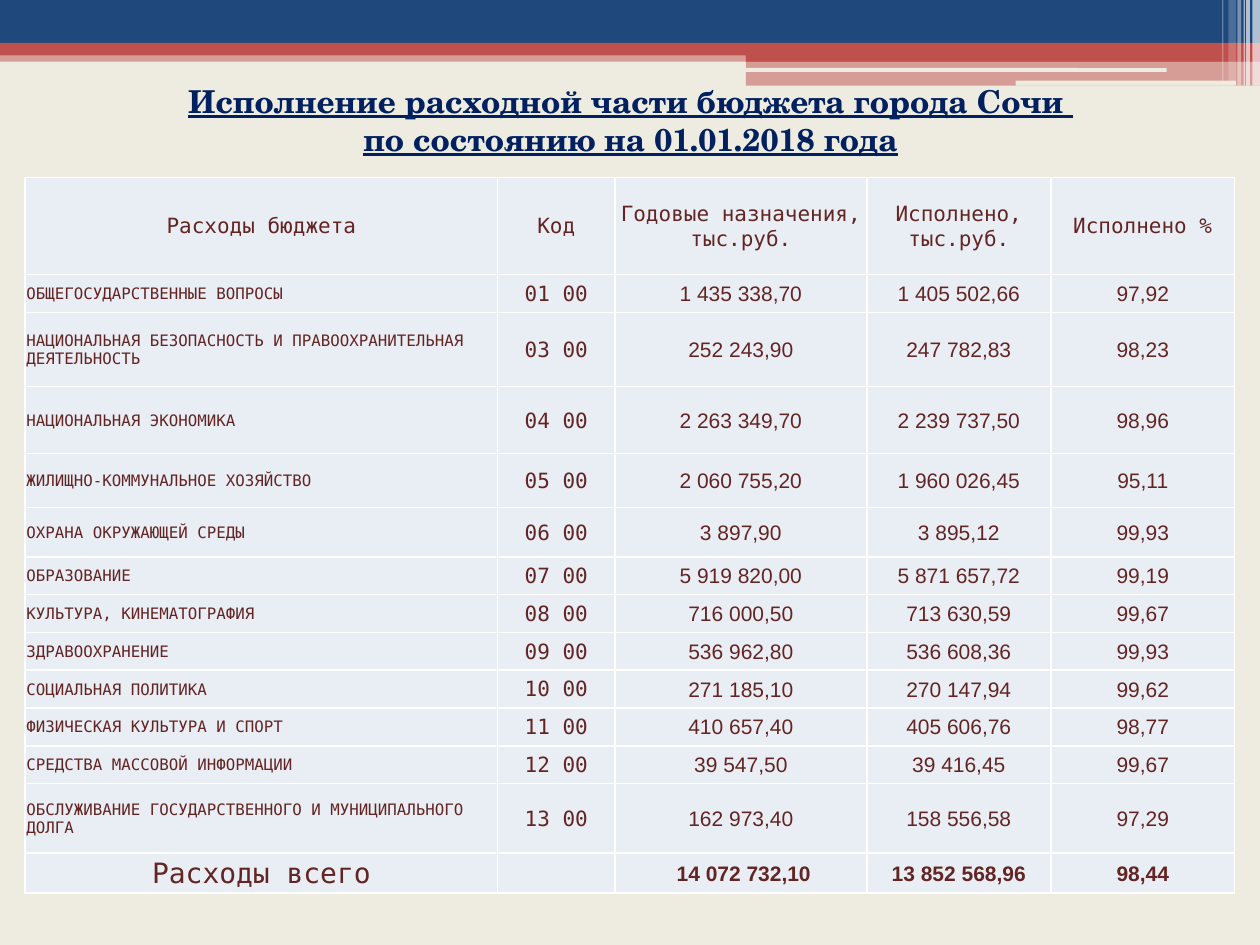
import lxml.etree
import pptx
import pptx.dml.color
import pptx.enum.shapes
import pptx.enum.text
import pptx.oxml.ns
import pptx.util

Inches = pptx.util.Inches
Pt = pptx.util.Pt
qn = pptx.oxml.ns.qn
SHAPE = pptx.enum.shapes.MSO_SHAPE
ALIGN = pptx.enum.text.PP_ALIGN
ANCHOR = pptx.enum.text.MSO_ANCHOR
FIT = pptx.enum.text.MSO_AUTO_SIZE

NAVY, RED, CREAM, WHITE = "1F497D", "C0504D", "EEECE1", "FFFFFF"
BROWN, PALE, INK = "632523", "E9EDF4", "002060"
MONO, SANS, SERIF = "DejaVu Sans Mono", "Arial", "TeX Gyre Schola"

# left, top, width, height, colour, opacity in percent
BANDS = [
    (0, 0.4, 10, 0.09, RED, 50),
    (0, 0, 10, 0.34, NAVY, 100),
    (0, 0.34, 10, 0.1, RED, 100),
    (5.92, 0.39, 4.08, 0.1, RED, 100),
    (5.92, 0.48, 4.08, 0.2, RED, 50),
]
SLOTS = [(5.91, 0.54, 3.35, 0.03), (8.06, 0.64, 1.75, 0.04)]
# left, width, height, opacity
STRIPES = [
    (9.94, 0.06, 0.68, 65),
    (9.89, 0.03, 0.68, 65),
    (9.87, 0.01, 0.68, 60),
    (9.82, 0.03, 0.68, 40),
    (9.75, 0.06, 0.64, 20),
    (9.7, 0.01, 0.64, 30),
]

TITLE = ["Исполнение расходной части бюджета города Сочи ",
         "по состоянию на 01.01.2018 года"]
HEAD = ["Расходы бюджета", "Код", "Годовые назначения, тыс.руб.",
        "Исполнено, тыс.руб.", "Исполнено %"]
ROWS = [
    ["ОБЩЕГОСУДАРСТВЕННЫЕ ВОПРОСЫ", "01 00", "1 435 338,70", "1 405 502,66", "97,92"],
    ["НАЦИОНАЛЬНАЯ БЕЗОПАСНОСТЬ И ПРАВООХРАНИТЕЛЬНАЯ ДЕЯТЕЛЬНОСТЬ",
     "03 00", "252 243,90", "247 782,83", "98,23"],
    ["НАЦИОНАЛЬНАЯ ЭКОНОМИКА", "04 00", "2 263 349,70", "2 239 737,50", "98,96"],
    ["ЖИЛИЩНО-КОММУНАЛЬНОЕ ХОЗЯЙСТВО", "05 00", "2 060 755,20", "1 960 026,45", "95,11"],
    ["ОХРАНА ОКРУЖАЮЩЕЙ СРЕДЫ", "06 00", "3 897,90", "3 895,12", "99,93"],
    ["ОБРАЗОВАНИЕ", "07 00", "5 919 820,00", "5 871 657,72", "99,19"],
    ["КУЛЬТУРА, КИНЕМАТОГРАФИЯ", "08 00", "716 000,50", "713 630,59", "99,67"],
    ["ЗДРАВООХРАНЕНИЕ", "09 00", "536 962,80", "536 608,36", "99,93"],
    ["СОЦИАЛЬНАЯ ПОЛИТИКА", "10 00", "271 185,10", "270 147,94", "99,62"],
    ["ФИЗИЧЕСКАЯ КУЛЬТУРА И СПОРТ", "11 00", "410 657,40", "405 606,76", "98,77"],
    ["СРЕДСТВА МАССОВОЙ ИНФОРМАЦИИ", "12 00", "39 547,50", "39 416,45", "99,67"],
    ["ОБСЛУЖИВАНИЕ ГОСУДАРСТВЕННОГО И МУНИЦИПАЛЬНОГО ДОЛГА",
     "13 00", "162 973,40", "158 556,58", "97,29"],
]
TOTAL = ["Расходы всего", "", " 14 072 732,10", "13 852 568,96", "98,44"]
WIDTHS = [3.75, 0.93, 2, 1.46, 1.46]
HEIGHTS = [0.77, 0.3, 0.59, 0.53, 0.43, 0.39] + [0.3] * 6 + [0.55, 0.32]

LABEL = {"name": MONO, "size": Pt(12)}
ITEM = {"name": MONO, "size": Pt(9)}
VALUE = {"name": SANS, "size": Pt(12)}
SUM = {"name": MONO, "size": Pt(16)}
BOLD = {**VALUE, "bold": True}
INSETS = {"margin_left": Inches(0.01), "margin_right": Inches(0.01),
          "margin_top": Inches(0.01), "margin_bottom": 0,
          "vertical_anchor": ANCHOR.MIDDLE}


def paint(target, color):
    target.rgb = pptx.dml.color.RGBColor.from_string(color)


def apply(target, values):
    for name, value in values.items():
        setattr(target, name, value)


def write(para, text, style, color, align=ALIGN.CENTER):
    para.alignment = align
    run = para.add_run()
    run.text = text
    apply(run.font, style)
    paint(run.font.color, color)


def add_band(slide, left, top, width, height, color, alpha=100, kind=SHAPE.RECTANGLE):
    band = slide.shapes.add_shape(
        kind, Inches(left), Inches(top), Inches(width), Inches(height))
    band.shadow.inherit = False
    band.line.fill.background()
    band.fill.solid()
    paint(band.fill.fore_color, color)
    if alpha < 100:
        tint = band.element.spPr.find(qn("a:solidFill"))[0]
        lxml.etree.SubElement(tint, qn("a:alpha"), val=str(alpha * 1000))


def add_title(slide):
    title = slide.shapes.title
    apply(title, {"left": Inches(0.2), "top": Inches(0.6),
                  "width": Inches(9.61), "height": Inches(0.71)})
    title.element.getparent().append(title.element)  # bring to the front
    frame = title.text_frame
    apply(frame, {"word_wrap": True, "auto_size": FIT.SHAPE_TO_FIT_TEXT,
                  "vertical_anchor": ANCHOR.TOP})
    style = {"name": SERIF, "size": Pt(18), "bold": True, "underline": True}
    for i, line in enumerate(TITLE):
        para = frame.add_paragraph() if i else frame.paragraphs[0]
        write(para, line, style, INK)


def add_edges(cell):
    props = cell._tc.get_or_add_tcPr()
    for side in ("a:lnL", "a:lnR", "a:lnT", "a:lnB"):
        edge = lxml.etree.SubElement(props, qn(side), w=str(Pt(1)))
        fill = lxml.etree.SubElement(edge, qn("a:solidFill"))
        lxml.etree.SubElement(fill, qn("a:srgbClr"), val=WHITE)


def fill_row(table, r, texts, styles, first=ALIGN.CENTER):
    for c, (text, style) in enumerate(zip(texts, styles)):
        cell = table.cell(r, c)
        apply(cell, INSETS)
        add_edges(cell)
        cell.fill.solid()
        paint(cell.fill.fore_color, PALE)
        align = ALIGN.CENTER if c else first
        write(cell.text_frame.paragraphs[0], text, style, BROWN, align)


def add_budget(slide):
    table = slide.shapes.add_table(
        len(HEIGHTS), len(WIDTHS), Inches(0.2), Inches(1.41),
        Inches(sum(WIDTHS)), Inches(sum(HEIGHTS))).table
    apply(table, {"first_row": False, "horz_banding": False})
    for col, width in zip(table.columns, WIDTHS):
        col.width = Inches(width)
    for row, height in zip(table.rows, HEIGHTS):
        row.height = Inches(height)
    fill_row(table, 0, HEAD, [LABEL] * 5)
    for r, texts in enumerate(ROWS, 1):
        fill_row(table, r, texts, [ITEM, LABEL] + [VALUE] * 3, ALIGN.LEFT)
    fill_row(table, len(ROWS) + 1, TOTAL, [SUM, LABEL] + [BOLD] * 3)


def main():
    deck = pptx.Presentation()
    apply(deck, {"slide_width": Inches(10), "slide_height": Inches(7.5)})
    slide = deck.slides.add_slide(deck.slide_layouts[5])
    slide.background.fill.solid()
    paint(slide.background.fill.fore_color, CREAM)
    for band in BANDS:
        add_band(slide, *band)
    for slot in SLOTS:
        add_band(slide, *slot, CREAM, kind=SHAPE.ROUNDED_RECTANGLE)
    for left, width, height, alpha in STRIPES:
        add_band(slide, left, 0, width, height, WHITE, alpha)
    add_budget(slide)
    add_title(slide)
    deck.save("out.pptx")


if __name__ == "__main__":
    main()
